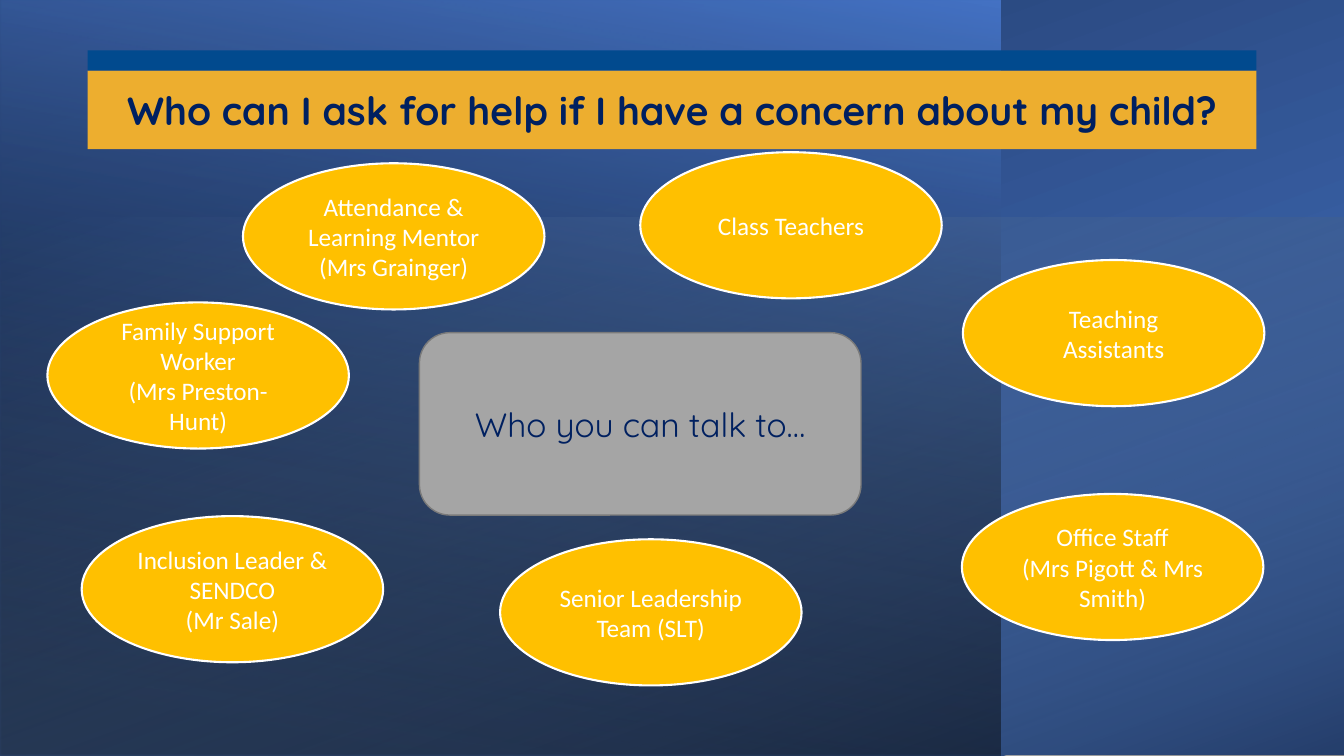
from lxml import etree
from pptx import Presentation
from pptx import util as u
from pptx.dml.color import RGBColor
from pptx.enum import shapes, text
from pptx.oxml import ns

presentation = Presentation()
presentation.slide_width = u.Inches(13.33)
presentation.slide_height = u.Inches(7.5)
slide = presentation.slides.add_slide(presentation.slide_layouts[6])


def color(value):
    return RGBColor.from_string(value)


def add_block(kind, box, content="", fill=None, line=None, line_width=1, font="Calibri",
              size=18, font_color="FFFFFF", bold=False):
    shape = slide.shapes.add_shape(kind, *map(u.Inches, box))
    shape.shadow.inherit = False
    if fill:
        shape.fill.solid()
        shape.fill.fore_color.rgb = color(fill)
    if line:
        shape.line.color.rgb = color(line)
        shape.line.width = u.Pt(line_width)
    else:
        shape.line.fill.background()
    if content:
        frame = shape.text_frame
        frame.word_wrap = True
        frame.vertical_anchor = text.MSO_ANCHOR.MIDDLE
        frame.text = content
        for paragraph in frame.paragraphs:
            paragraph.alignment = text.PP_ALIGN.CENTER
            paragraph.font.name = font
            paragraph.font.size = u.Pt(size)
            paragraph.font.bold = bold
            paragraph.font.color.rgb = color(font_color)
    return shape


RECTANGLE = shapes.MSO_SHAPE.RECTANGLE

backdrops = [
    ((2.92, -2.92, 7.5, 13.33), 270, 200, [(8, "4472C4", 100), (100, "203864", 100)]),
    ((0, 0, 9.92, 7.5), 180, 80, [(8, "000000", 52), (100, "4472C4", 100)]),
    ((3.99, -1.84, 5.35, 13.34), 270, 20, [(0, "9DC3E6", 0), (100, "000000", 46)]),
]
for box, rotation, angle, stops in backdrops:
    backdrop = add_block(RECTANGLE, box)
    backdrop.rotation = rotation
    properties = backdrop._element.spPr
    properties.xfrm.set("flipH", "1")
    backdrop.fill.gradient()
    gradient = properties.find(ns.qn("a:gradFill"))
    for child in list(gradient):
        gradient.remove(child)
    stop_list = etree.SubElement(gradient, ns.qn("a:gsLst"))
    for position, stop_color, opacity in stops:
        stop = etree.SubElement(stop_list, ns.qn("a:gs"), pos=str(position * 1000))
        tone = etree.SubElement(stop, ns.qn("a:srgbClr"), val=stop_color)
        if opacity < 100:
            etree.SubElement(tone, ns.qn("a:alpha"), val=str(opacity * 1000))
    etree.SubElement(gradient, ns.qn("a:lin"), ang=str(angle * 60000), scaled="0")

add_block(RECTANGLE, (0.87, 0.7, 11.59, 0.78),
          "Who can I ask for help if I have a concern about my child?",
          fill="EDAE2F", font="Quicksand", size=28, font_color="002060", bold=True)
add_block(RECTANGLE, (0.87, 0.5, 11.59, 0.2), fill="014A8E")
add_block(shapes.MSO_SHAPE.ROUNDED_RECTANGLE, (4.16, 3.3, 4.38, 1.81), "Who you can talk to…",
          fill="A5A5A5", line="7A7A7A", font="Quicksand", size=24, font_color="002060")

contacts = [
    (2.41, 1.62, "Attendance & Learning Mentor\n(Mrs Grainger)"),
    (9.55, 2.58, "Teaching Assistants"),
    (6.35, 1.51, "Class Teachers"),
    (4.96, 5.35, "Senior Leadership Team (SLT)"),
    (0.81, 5.12, "Inclusion Leader & SENDCO\n(Mr Sale)"),
    (9.54, 4.9, "Office Staff\n(Mrs Pigott & Mrs Smith)"),
    (0.47, 3, "Family Support Worker\n(Mrs Preston-Hunt)"),
]
for left, top, contact in contacts:
    add_block(shapes.MSO_SHAPE.OVAL, (left, top, 2.99, 1.45), contact,
              fill="FFC000", line="FFFFFF", line_width=1.5)

presentation.save("out.pptx")
